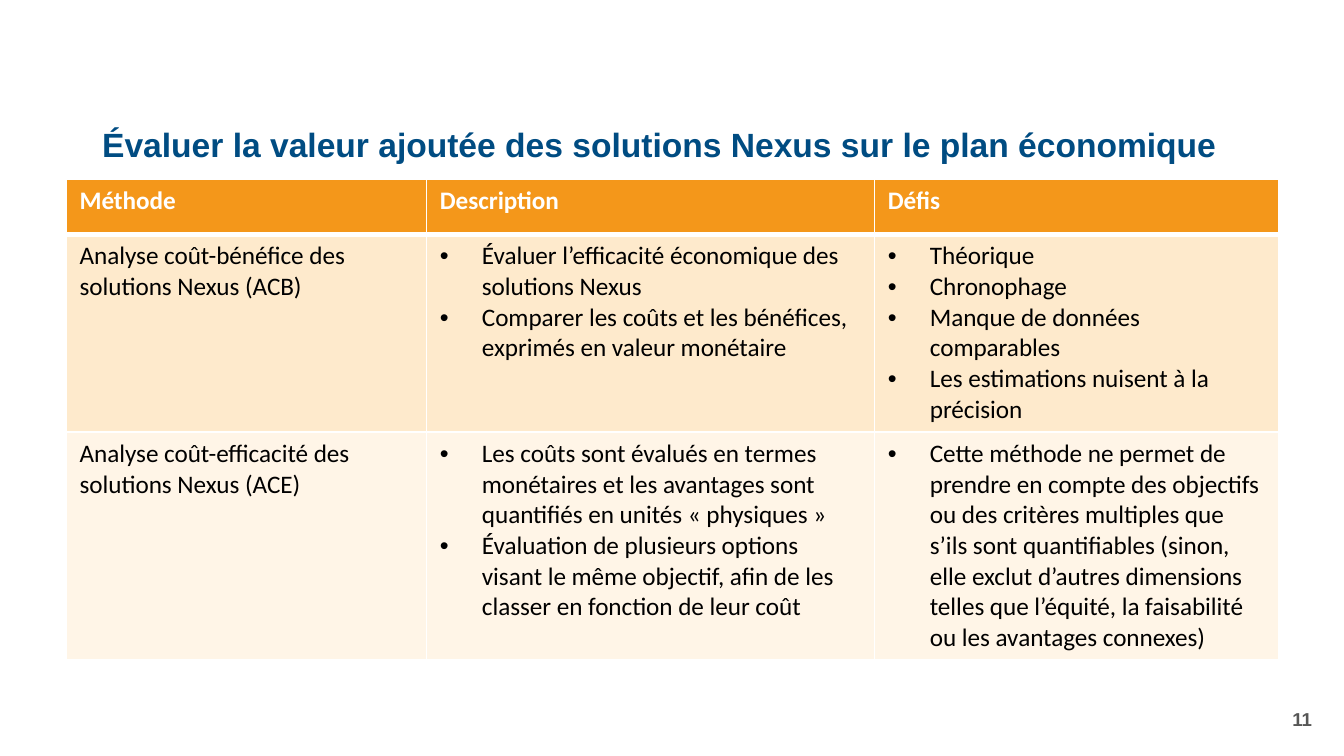
"""Build a slide with a table comparing economic assessment methods."""
from dataclasses import dataclass

from lxml.etree import SubElement
from pptx import Presentation
from pptx.dml.color import RGBColor as RGB
from pptx.enum.text import MSO_ANCHOR as Anchor, MSO_AUTO_SIZE as AutoSize, PP_ALIGN as Align
from pptx.oxml.ns import qn
from pptx.util import Pt

TITLE = "Évaluer la valeur ajoutée des solutions Nexus sur le plan économique"
PAGE = "11"
HEADERS = ["Méthode", "Description", "Défis"]
METHODS = [
    (
        "Analyse coût-bénéfice des solutions Nexus (ACB)",
        ["Évaluer l’efficacité économique des solutions Nexus",
         "Comparer les coûts et les bénéfices, exprimés en valeur monétaire"],
        ["Théorique",
         "Chronophage",
         "Manque de données comparables",
         "Les estimations nuisent à la précision"],
    ),
    (
        "Analyse coût-efficacité des solutions Nexus (ACE)",
        ["Les coûts sont évalués en termes monétaires et les avantages sont "
         "quantifiés en unités « physiques »",
         "Évaluation de plusieurs options visant le même objectif, afin de les "
         "classer en fonction de leur coût"],
        ["Cette méthode ne permet de prendre en compte des objectifs ou des critères "
         "multiples que s’ils sont quantifiables (sinon, elle exclut d’autres dimensions "
         "telles que l’équité, la faisabilité ou les avantages connexes)"],
    ),
]
COL_WIDTHS = [193, 240, 216.5]
ROW_HEIGHTS = [29.5, 105, 122]
TABLE_LEFT, TABLE_TOP = 35.5, 96


@dataclass(frozen=True)
class Theme:
    heading: str = "Arial"
    body: str = "Calibri"
    title: str = "004C82"
    page: str = "575756"
    text: str = "000000"
    white: str = "FFFFFF"
    fills: tuple = ("F4971A", "FEEACC", "FFF5E7")
    title_size: float = 18
    body_size: float = 13.5
    page_size: float = 10
    indent: float = 22.5
    rule: float = 1
    header_rule: float = 3


T = Theme()


def add_run(p, text, font, size, color, bold=False):
    r = p.add_run()
    r.text = text
    r.font.name, r.font.size, r.font.bold = font, Pt(size), bold
    r.font.color.rgb = RGB.from_string(color)


def add_bullet(p):
    pPr = p._p.get_or_add_pPr()
    pPr.set("marL", str(Pt(T.indent)))
    pPr.set("indent", str(-Pt(T.indent)))
    SubElement(pPr, qn("a:buFont"), typeface="Arial")
    SubElement(pPr, qn("a:buChar"), char="•")


def add_borders(cell, row):
    tcPr = cell._tc.get_or_add_tcPr()
    thick = {(0, "lnB"), (1, "lnT")}
    for side in ("lnL", "lnR", "lnT", "lnB"):
        width = T.header_rule if (row, side) in thick else T.rule
        ln = SubElement(tcPr, qn(f"a:{side}"), w=str(Pt(width)))
        SubElement(SubElement(ln, qn("a:solidFill")), qn("a:srgbClr"), val=T.white)


def fill_cell(cell, row, content):
    add_borders(cell, row)
    cell.fill.solid()
    cell.fill.fore_color.rgb = RGB.from_string(T.fills[row])
    bulleted = isinstance(content, list)
    tf = cell.text_frame
    for i, text in enumerate(content if bulleted else [content]):
        p = tf.add_paragraph() if i else tf.paragraphs[0]
        if bulleted:
            add_bullet(p)
        header = row == 0
        add_run(p, text, T.body, T.body_size, T.white if header else T.text, header)


def add_methods_table(s):
    rows = [HEADERS, *METHODS]
    table = s.shapes.add_table(
        len(rows), len(HEADERS), Pt(TABLE_LEFT), Pt(TABLE_TOP),
        Pt(sum(COL_WIDTHS)), Pt(sum(ROW_HEIGHTS))).table
    for col, width in zip(table.columns, COL_WIDTHS):
        col.width = Pt(width)
    for r, (height, contents) in enumerate(zip(ROW_HEIGHTS, rows)):
        table.rows[r].height = Pt(height)
        for c, content in enumerate(contents):
            fill_cell(table.cell(r, c), r, content)


def set_line(tf, text, align, size, color):
    tf.word_wrap, tf.auto_size = True, AutoSize.NONE
    tf.vertical_anchor = Anchor.MIDDLE
    p = tf.paragraphs[0]
    p.alignment = align
    add_run(p, text, T.heading, size, color, True)
    return p


def main():
    prs = Presentation()
    prs.slide_width, prs.slide_height = Pt(720), Pt(405)
    s = prs.slides.add_slide(prs.slide_layouts[5])

    title = s.shapes.title
    title.left, title.top, title.width, title.height = Pt(47.5), Pt(57.5), Pt(674.5), Pt(42.5)
    p = set_line(title.text_frame, TITLE, Align.LEFT, T.title_size, T.title)
    p.line_spacing = 0.9

    add_methods_table(s)
    page = s.shapes.add_textbox(Pt(548), Pt(374.5), Pt(162), Pt(21.5))
    set_line(page.text_frame, PAGE, Align.RIGHT, T.page_size, T.page)
    prs.save("out.pptx")


if __name__ == "__main__":
    main()
